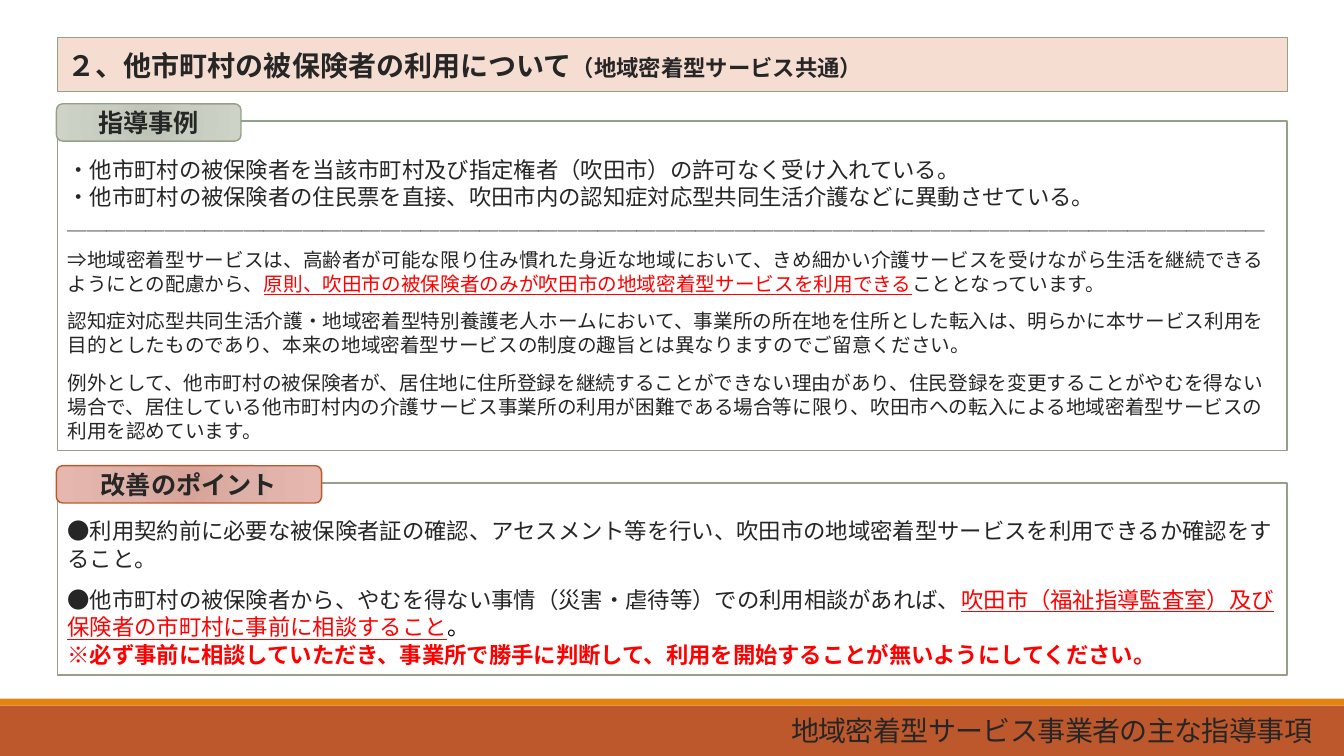
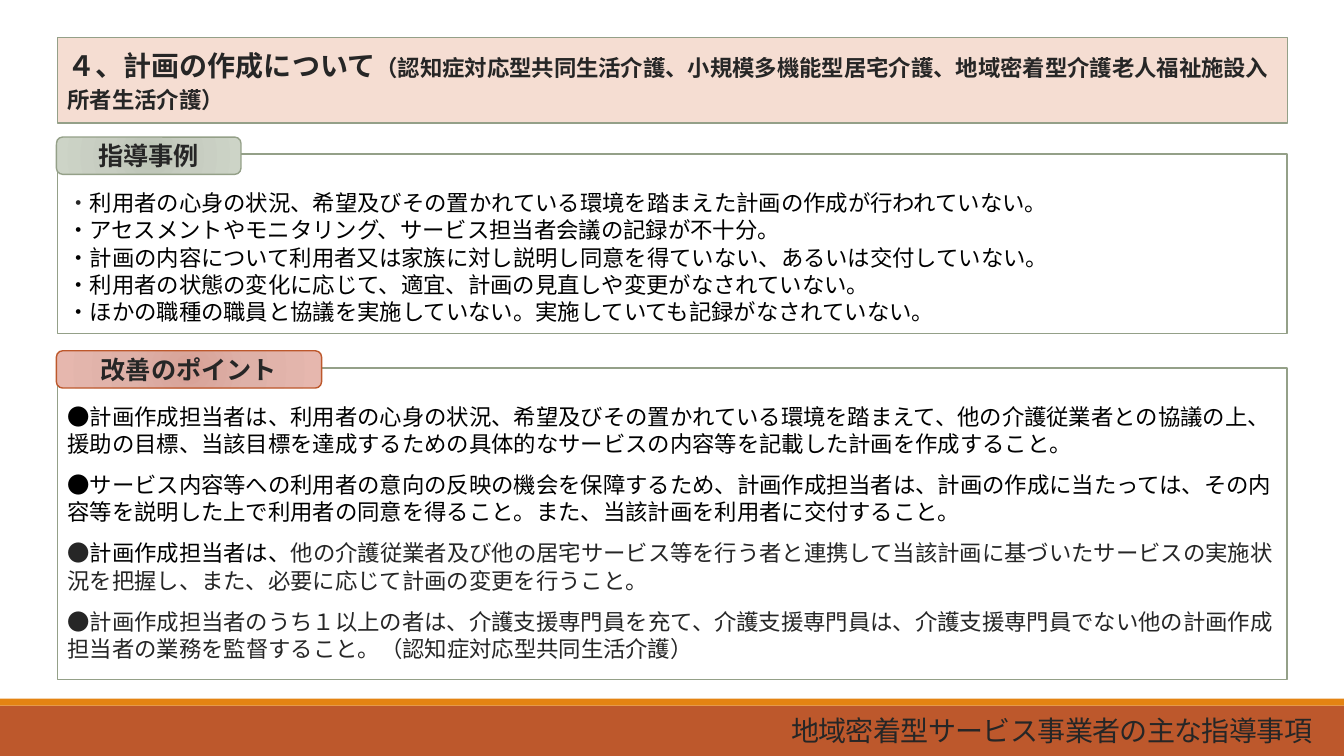
from lxml.etree import SubElement
from pptx import Presentation
from pptx.dml.color import RGBColor
from pptx.enum.shapes import MSO_SHAPE
from pptx.enum.text import MSO_ANCHOR, MSO_AUTO_SIZE, PP_ALIGN
from pptx.oxml import parse_xml
from pptx.oxml.ns import nsdecls, qn
from pptx.util import Inches, Pt

FONT = "Noto Sans CJK JP"
HUES = {
    "ink": "262626", "black": "000000", "red": "FF0000", "white": "FFFFFF",
    "sage": "94A088", "rust": "BD582C", "gold": "E48312", "blush": "F5DDD2",
}
# Tag kinds: label, width, line colour, gradient stops
TAGS = {
    "case": ("指導事例", 13.73, "sage", ("BBC3B5", "C7CDC1", "CDD4C7")),
    "point": ("改善のポイント", 19.73, "rust", ("D7A197", "DEB1A8", "E6B7AE")),
}
LEFT, WIDE = 4.28, 91.5  # shares of the slide, in percent
LINE = 1.22              # line pitch per point of text
GAP = 9.8                # points between blocks of text


class Deck:
    """Holds the style and the current slide; places are percent of its size."""

    def __init__(self):
        self.prs = Presentation()
        self.prs.slide_width = Inches(13.33)
        self.prs.slide_height = Inches(7.5)
        self.base = self.prs.slide_layouts[5]
        self.slide = None

    def box(self, x, y, w, h):
        wide, high = self.prs.slide_width, self.prs.slide_height
        return [round(n * size / 100)
                for n, size in ((x, wide), (y, high), (w, wide), (h, high))]

    def paint(self, shape, fill, line=None, width=1):
        shape.fill.solid()
        shape.fill.fore_color.rgb = RGBColor.from_string(HUES[fill])
        if line:
            shape.line.color.rgb = RGBColor.from_string(HUES[line])
            shape.line.width = Pt(width)
        else:
            shape.line.fill.background()

    def shape(self, kind, place, *look):
        shape = self.slide.shapes.add_shape(kind, *self.box(*place))
        shape.shadow.inherit = False
        self.paint(shape, *look)
        return shape

    def frame(self, shape, anchor):
        frame = shape.text_frame
        frame.word_wrap = True
        frame.auto_size = MSO_AUTO_SIZE.NONE
        frame.vertical_anchor = anchor
        return frame

    def style(self, run, size, hue="ink", bold=False, under=False):
        font = run.font
        font.size, font.bold, font.underline = Pt(size), bold, under
        font.name = FONT
        font.color.rgb = RGBColor.from_string(HUES[hue])

    def east(self, shape, **marks):
        """Use the font for East Asian text too, and set further run marks."""
        for props in shape.element.iter(qn("a:rPr")):
            SubElement(props, qn("a:ea")).set("typeface", FONT)
            for key, value in marks.items():
                props.set(key, value)

    def page(self, head, note, high):
        first = self.slide is None
        self.slide = self.prs.slides.add_slide(self.base)
        if first:
            self.bands()
        self.bar(head, note, high)
        self.foot()

    def bands(self):
        # Bottom bands live on the shared layout
        for y, h, hue in ((93.33, 6.67, "rust"), (92.4, 0.93, "gold")):
            band = self.shape(MSO_SHAPE.RECTANGLE, (0, y, 100, h), hue)
            self.base.shapes.element.append(band.element)

    def bar(self, head, note, high):
        title = self.slide.shapes.title
        title.left, title.top, title.width, title.height = self.box(
            LEFT, 4.93, WIDE, high)
        self.paint(title, "blush", "sage")
        frame = self.frame(title, MSO_ANCHOR.MIDDLE)
        frame.margin_top = Inches(0.1)
        para = frame.paragraphs[0]
        para.alignment = PP_ALIGN.LEFT
        para.line_spacing = Pt(22)
        for text, size in ((head, 20), (note, 16)):
            run = para.add_run()
            run.text = text
            self.style(run, size, bold=True)
        self.east(title)

    def foot(self):
        note = self.slide.shapes.add_textbox(*self.box(LEFT, 93.87, 94.05, 6.13))
        frame = self.frame(note, MSO_ANCHOR.MIDDLE)
        frame.text = "地域密着型サービス事業者の主な指導事項"
        para = frame.paragraphs[0]
        para.alignment = PP_ALIGN.RIGHT
        para.line_spacing = 0.85
        self.style(para.runs[0], 20)
        self.east(note, spc="-50")

    def panel(self, kind, top, high, rows):
        """Framed text with its tag; a row is size, space before, then runs."""
        panel = self.shape(MSO_SHAPE.RECTANGLE, (LEFT, top, WIDE, high),
                           "white", "sage", 1.25)
        frame = self.frame(panel, MSO_ANCHOR.TOP)
        frame.margin_top = Inches(0.34)
        for i, (size, gap, *runs) in enumerate(rows):
            para = frame.add_paragraph() if i else frame.paragraphs[0]
            para.alignment = PP_ALIGN.LEFT
            para.line_spacing = Pt(size * LINE)
            para.space_before = Pt(gap)
            for text, *look in runs:
                run = para.add_run()
                run.text = text
                self.style(run, size, *look)
        self.east(panel)
        self.tag(kind, top - 2.27)

    def tag(self, kind, top):
        label, wide, line, stops = TAGS[kind]
        tag = self.shape(MSO_SHAPE.ROUNDED_RECTANGLE,
                         (4.2, top, wide, 4.93), "white", line)
        marks = "".join(
            f'<a:gs pos="{pos}000"><a:srgbClr val="{hue}"/></a:gs>'
            for pos, hue in zip((0, 45, 100), stops))
        blend = parse_xml(
            f'<a:gradFill {nsdecls("a")}><a:gsLst>{marks}</a:gsLst>'
            '<a:path path="circle"><a:fillToRect l="100000" t="100000" '
            'r="100000" b="100000"/></a:path></a:gradFill>')
        props = tag.element.spPr
        props.replace(props.find(qn("a:solidFill")), blend)
        frame = self.frame(tag, MSO_ANCHOR.MIDDLE)
        frame.text = label
        para = frame.paragraphs[0]
        para.alignment = PP_ALIGN.CENTER
        self.style(para.runs[0], 18, bold=True)
        self.east(tag)


def main():
    deck = Deck()

    # Use by people insured elsewhere
    deck.page("２、他市町村の被保険者の利用について",
              "（地域密着型サービス共通）", 7.2)
    deck.panel("case", 16, 43.6, [
        (16, 0, ("・他市町村の被保険者を当該市町村及び指定権者（吹田市）の許可なく受け入れている。",)),
        (16, 0, ("・他市町村の被保険者の住民票を直接、吹田市内の認知症対応型共同生活介護などに異動させている。",)),
        (14, 0, ("＿" * 61,)),
        (14, GAP,
         ("⇒地域密着型サービスは、高齢者が可能な限り住み慣れた身近な地域において、"
          "きめ細かい介護サービスを受けながら生活を継続できるようにとの配慮から、",),
         ("原則、吹田市の被保険者のみが吹田市の地域密着型サービスを利用できる", "red", False, True),
         ("こととなっています。",)),
        (14, GAP,
         ("認知症対応型共同生活介護・地域密着型特別養護老人ホームにおいて、"
          "事業所の所在地を住所とした転入は、明らかに本サービス利用を目的としたものであり、"
          "本来の地域密着型サービスの制度の趣旨とは異なりますのでご留意ください。",)),
        (14, GAP,
         ("例外として、他市町村の被保険者が、居住地に住所登録を継続することができない理由があり、"
          "住民登録を変更することがやむを得ない場合で、"
          "居住している他市町村内の介護サービス事業所の利用が困難である場合等に限り、"
          "吹田市への転入による地域密着型サービスの利用を認めています。",)),
    ])
    deck.panel("point", 63.87, 25.47, [
        (16, 0,
         ("●利用契約前に必要な被保険者証の確認、アセスメント等を行い、"
          "吹田市の地域密着型サービスを利用できるか確認をすること。",)),
        (16, GAP,
         ("●他市町村の被保険者から、やむを得ない事情（災害・虐待等）での利用相談があれば、",),
         ("吹田市（福祉指導監査室）及び保険者の市町村に事前に相談すること", "red", False, True),
         ("。", "black")),
        (16, 0,
         ("※必ず事前に相談していただき、事業所で勝手に判断して、"
          "利用を開始することが無いようにしてください。", "red", True)),
    ])

    # Making of care plans
    deck.page("４、計画の作成について",
              "（認知症対応型共同生活介護、小規模多機能型居宅介護、"
              "地域密着型介護老人福祉施設入所者生活介護）", 11.33)
    cases = (
        "・アセスメントやモニタリング、サービス担当者会議の記録が不十分。",
        "・計画の内容について利用者又は家族に対し説明し同意を得ていない、あるいは交付していない。",
        "・利用者の状態の変化に応じて、適宜、計画の見直しや変更がなされていない。",
        "・ほかの職種の職員と協議を実施していない。実施していても記録がなされていない。",
    )
    deck.panel("case", 20.4, 23.73, [
        (16, 0, ("・",),
         ("利用者の心身の状況、希望及びその置かれている環境を踏まえた計画の作成が行われていない。", "black")),
        *((16, 0, (text, "black")) for text in cases),
    ])
    deck.panel("point", 48.67, 41.2, [
        (16, 0,
         ("●計画作成担当者は、利用者の心身の状況、希望及びその置かれている環境を踏まえて、"
          "他の介護従業者との協議の上、援助の目標、"
          "当該目標を達成するための具体的なサービスの内容等を記載した計画を作成すること。", "black")),
        (16, GAP,
         ("●サービス内容等への利用者の意向の反映の機会を保障するため、計画作成担当者は、"
          "計画の作成に当たっては、その内容等を説明した上で利用者の同意を得ること。"
          "また、当該計画を利用者に交付すること。", "black")),
        (16, GAP, ("●",), ("計画作成担当者は、", "black"),
         ("他の介護従業者及び他の居宅サービス等を行う者と連携して"
          "当該計画に基づいたサービスの実施状況を把握し、"
          "また、必要に応じて計画の変更を行うこと。",)),
        (16, GAP,
         ("●計画作成担当者のうち１以上の者は、介護支援専門員を充て、介護支援専門員は、"
          "介護支援専門員でない他の計画作成担当者の業務を監督すること。"
          "（認知症対応型共同生活介護）",)),
    ])
    deck.prs.save("out.pptx")


if __name__ == "__main__":
    main()
